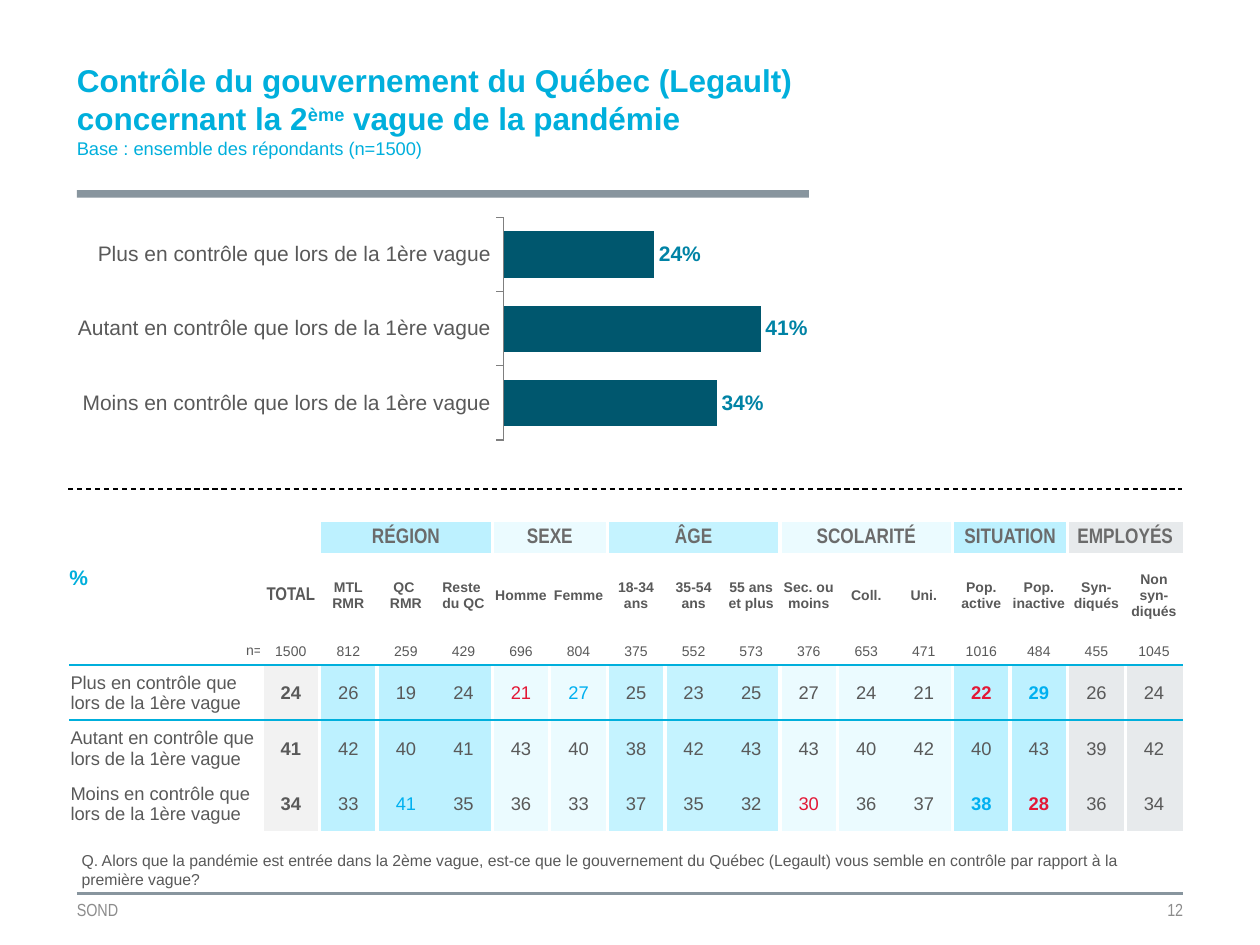
"""Build a survey slide with a bar chart and a demographic breakdown table."""
from lxml.etree import SubElement
from pptx import Presentation
from pptx.chart.data import CategoryChartData
from pptx.dml.color import RGBColor
from pptx.enum.chart import XL_CHART_TYPE, XL_LABEL_POSITION, XL_TICK_LABEL_POSITION, XL_TICK_MARK
from pptx.enum.dml import MSO_LINE
from pptx.enum.shapes import MSO_CONNECTOR, MSO_SHAPE
from pptx.enum.text import MSO_ANCHOR, PP_ALIGN
from pptx.oxml import parse_xml
from pptx.oxml.ns import nsdecls, qn
from pptx.util import Inches, Pt

WHITE = RGBColor(0xFF, 0xFF, 0xFF)
BLACK = RGBColor(0, 0, 0)
CYAN = RGBColor(0x00, 0xAF, 0xDC)
SLATE = RGBColor(0x88, 0x95, 0x9E)
TEXT = RGBColor(0x59, 0x59, 0x59)
HEADING = RGBColor(0x6B, 0x6B, 0x6B)
FOOTER = RGBColor(0x8C, 0x8C, 0x8C)
AXIS = RGBColor(0x7F, 0x7F, 0x7F)
BAR = RGBColor(0x00, 0x57, 0x6E)
LABEL = RGBColor(0x00, 0x83, 0xA5)
LOW = RGBColor(0xE3, 0x18, 0x36)
HIGH = RGBColor(0x00, 0xB0, 0xF0)
TOTAL_FILL = RGBColor(0xF2, 0xF2, 0xF2)
SKY = RGBColor(0xBD, 0xF1, 0xFF)
PALE = RGBColor(0xEB, 0xFB, 0xFF)
AQUA = RGBColor(0xC5, 0xF3, 0xFF)
GREY = RGBColor(0xE7, 0xEA, 0xEC)

NARROW = "Arial Narrow"
NO_STYLE = "{2D5ABB26-0587-4C30-8999-92F81FD0307C}"
ANSWERS = [f"{level} en contrôle que lors de la 1ère vague" for level in ("Plus", "Autant", "Moins")]
SHARES = [0.24, 0.41, 0.34]
GROUPS = [
    ("", 1, TOTAL_FILL), ("RÉGION", 3, SKY), ("SEXE", 2, PALE), ("ÂGE", 3, AQUA),
    ("SCOLARITÉ", 3, PALE), ("SITUATION", 2, SKY), ("EMPLOYÉS", 2, GREY),
]
COLUMNS = [
    "TOTAL", "MTL\vRMR", "QC \vRMR", "Reste \vdu QC", "Homme", "Femme",
    "18-34 ans", "35-54 ans", "55 ans et plus", "Sec. ou moins", "Coll.", "Uni.",
    "Pop. active", "Pop. inactive", "Syn-diqués", "Non syn-diqués",
]
COUNTS = [1500, 812, 259, 429, 696, 804, 375, 552, 573, 376, 653, 471, 1016, 484, 455, 1045]
RESULTS = [
    [24, 26, 19, 24, 21, 27, 25, 23, 25, 27, 24, 21, 22, 29, 26, 24],
    [41, 42, 40, 41, 43, 40, 38, 42, 43, 43, 40, 42, 40, 43, 39, 42],
    [34, 33, 41, 35, 36, 33, 37, 35, 32, 30, 36, 37, 38, 28, 36, 34],
]
MARKS = {
    (0, 4): (LOW, False), (0, 5): (HIGH, False), (0, 12): (LOW, True), (0, 13): (HIGH, True),
    (2, 2): (HIGH, False), (2, 9): (LOW, False), (2, 12): (HIGH, True), (2, 13): (LOW, True),
}
ROW_HEIGHTS = [0.25, 0.66, 0.22, 0.44, 0.44, 0.44]


def style(font, size, color, bold=False, name="Arial"):
    """Set the face, size, colour and weight of a font."""
    font.name, font.size, font.bold = name, Pt(size), bold
    font.color.rgb = color


def add_line(slide, x1, x2, y, color, width, dash=None):
    """Draw a horizontal rule without a shadow."""
    ln = slide.shapes.add_connector(MSO_CONNECTOR.STRAIGHT, Inches(x1), Inches(y), Inches(x2), Inches(y))
    ln.line.color.rgb, ln.line.width = color, Pt(width)
    if dash:
        ln.line.dash_style = dash
    SubElement(ln._element.spPr, qn("a:effectLst"))


def add_text(slide, box, text, size, color, name="Arial", align=PP_ALIGN.LEFT, inset=True):
    """Add a wrapped text box holding one styled paragraph and return its frame."""
    tf = slide.shapes.add_textbox(*map(Inches, box)).text_frame
    tf.word_wrap = True
    if not inset:
        tf.margin_left = tf.margin_right = tf.margin_top = tf.margin_bottom = 0
        tf.vertical_anchor = MSO_ANCHOR.MIDDLE
    p = tf.paragraphs[0]
    p.text, p.alignment = text, align
    style(p.runs[0].font, size, color, name=name)
    return tf


def add_title(slide):
    """Add the title with its superscript and the base line below it."""
    tf = add_text(slide, (0.61, 0.41, 5.81, 1.1),
                  "Contrôle du gouvernement du Québec (Legault) concernant la 2", 18, CYAN, inset=False)
    tf.margin_bottom = Inches(0.17)
    p = tf.paragraphs[0]
    p.runs[0].font.bold = True
    for text in ("ème", " vague de la pandémie"):
        r = p.add_run()
        r.text = text
        style(r.font, 18, CYAN, bold=True)
    p.runs[1].font._element.set("baseline", "30000")
    p.add_line_break()
    r = p.add_run()
    r.text = "Base : ensemble des répondants (n=1500)"
    style(r.font, 10.5, CYAN)


def add_bars(slide):
    """Add the bar chart of the three answers."""
    data = CategoryChartData(number_format="0%")
    data.categories = ANSWERS
    data.add_series("Series 1", SHARES)
    box = map(Inches, (0.43, 1.69, 7.28, 1.84))
    chart = slide.shapes.add_chart(XL_CHART_TYPE.BAR_CLUSTERED, *box, data).chart
    chart.has_legend = chart.has_title = False
    style(chart.font, 10.5, AXIS)
    cat, val = chart.category_axis, chart.value_axis
    cat.reverse_order = True
    cat.major_tick_mark = XL_TICK_MARK.OUTSIDE
    cat.tick_label_position = XL_TICK_LABEL_POSITION.LOW
    cat.format.line.color.rgb = AXIS
    style(cat.tick_labels.font, 12, TEXT)
    val.minimum_scale, val.maximum_scale, val.major_unit = 0, 0.6, 0.2
    val.has_major_gridlines = val.visible = False
    plot = chart.plots[0]
    plot.gap_width, plot.vary_by_categories = 60, False
    fill = plot.series[0].format.fill
    fill.solid()
    fill.fore_color.rgb = BAR
    plot.has_data_labels = True
    labels = plot.data_labels
    labels.show_value, labels.position = True, XL_LABEL_POSITION.OUTSIDE_END
    labels.number_format, labels.number_format_is_linked = "0%", False
    style(labels.font, 12, LABEL, bold=True)
    area = chart._chartSpace.chart.plotArea
    for old in area.findall(qn("c:layout")):
        area.remove(old)
    sizes = "".join(f'<c:{k} val="{v}"/>' for k, v in (("x", 0.49), ("y", 0.02), ("w", 0.41), ("h", 0.96)))
    area.insert(0, parse_xml(
        f'<c:layout {nsdecls("c")}><c:manualLayout><c:layoutTarget val="inner"/>'
        f'<c:xMode val="edge"/><c:yMode val="edge"/>{sizes}</c:manualLayout></c:layout>'))


def set_border(cell, side, color, width):
    """Draw one side of a cell: L, R, T or B, called in that order."""
    cell._tc.get_or_add_tcPr().append(parse_xml(
        f'<a:ln{side} {nsdecls("a")} w="{Pt(width)}"><a:solidFill>'
        f'<a:srgbClr val="{color}"/></a:solidFill></a:ln{side}>'))


def set_cell(cell, text, size, color=TEXT, bold=False, name="Arial", align=PP_ALIGN.CENTER):
    """Write one styled, vertically centred cell."""
    cell.text = str(text)
    cell.vertical_anchor = MSO_ANCHOR.MIDDLE
    cell.margin_left = cell.margin_right = cell.margin_top = Inches(0.01)
    cell.margin_bottom = 0
    p = cell.text_frame.paragraphs[0]
    p.alignment = align
    style(p.font, size, color, bold, name)
    for r in p.runs:
        style(r.font, size, color, bold, name)


def set_side_label(cell, text, size, color, bold, align):
    """Write a label of the first column above the answers."""
    set_cell(cell, text, size, color, bold, align=align)
    cell.margin_left = cell.margin_right = 0
    cell.margin_top = cell.margin_bottom = Inches(0.05)
    cell.text_frame.paragraphs[0].line_spacing = 0.95


def frame_cells(table):
    """Draw the group gaps and the header rule, and fill the groups."""
    groups = [(None, True, True)]
    for _, span, fill in GROUPS:
        groups += [(fill, i == 0, i == span - 1) for i in range(span)]
    for row in range(len(ROW_HEIGHTS)):
        for col, (color, first, last) in enumerate(groups):
            cell = table.cell(row, col)
            sides = [("L", first and col > 0, WHITE, 2.25), ("R", last and col < 16, WHITE, 2.25),
                     ("T", row == 3, CYAN, 1.5), ("B", row == 2, CYAN, 1.5)]
            for side, wanted, line, width in sides:
                if wanted:
                    set_border(cell, side, line, width)
            if color and (row > 2 or (row == 0 and col > 1)):
                cell.fill.solid()
                cell.fill.fore_color.rgb = color
            else:
                cell.fill.background()


def add_breakdown(slide):
    """Add the table of results by demographic group."""
    box = map(Inches, (0.55, 4.14, 8.84, sum(ROW_HEIGHTS)))
    table = slide.shapes.add_table(len(ROW_HEIGHTS), len(COLUMNS) + 1, *box).table
    table.first_row = table.horz_banding = False
    table._tbl.tblPr.find(qn("a:tableStyleId")).text = NO_STYLE
    for i, column in enumerate(table.columns):
        column.width = Inches((8.84 - 1.53) / len(COLUMNS) if i else 1.53)
    for row, height in zip(table.rows, ROW_HEIGHTS):
        row.height = Inches(height)
    frame_cells(table)
    table.cell(0, 0).merge(table.cell(1, 0))
    set_side_label(table.cell(0, 0), "%", 12, CYAN, True, PP_ALIGN.LEFT)
    set_side_label(table.cell(2, 0), "n=", 8, TEXT, False, PP_ALIGN.RIGHT)
    col = 1
    for title, span, _ in GROUPS:
        if span > 1:
            table.cell(0, col).merge(table.cell(0, col + span - 1))
        set_cell(table.cell(0, col), title, 12, HEADING, True, NARROW)
        col += span
    for col, (heading, count) in enumerate(zip(COLUMNS, COUNTS), 1):
        size, name = (10.5, NARROW) if col == 1 else (8, "Arial")
        set_cell(table.cell(1, col), heading, size, bold=True, name=name)
        set_cell(table.cell(2, col), count, 8)
    for i, (answer, values) in enumerate(zip(ANSWERS, RESULTS)):
        set_cell(table.cell(i + 3, 0), answer, 10.5, align=PP_ALIGN.LEFT)
        for j, value in enumerate(values):
            color, bold = MARKS.get((i, j), (TEXT, j == 0))
            set_cell(table.cell(i + 3, j + 1), value, 10.5, color, bold)


def main():
    """Build and save the slide."""
    prs = Presentation()
    prs.slide_width, prs.slide_height = Inches(10), Inches(7.5)
    s = prs.slides.add_slide(prs.slide_layouts[6])
    add_line(s, 0.61, 9.39, 7.09, SLATE, 1.5)
    sp = s.shapes.add_shape(MSO_SHAPE.RECTANGLE, *map(Inches, (0.61, 1.51, 5.81, 0.06)))
    sp.shadow.inherit = False
    sp.fill.solid()
    sp.fill.fore_color.rgb = SLATE
    sp.line.fill.background()
    add_text(s, (0.61, 7.09, 2.8, 0.26), "SOND", 10, FOOTER, NARROW, inset=False)
    add_text(s, (6.55, 7.09, 2.84, 0.26), "12", 10, FOOTER, NARROW, PP_ALIGN.RIGHT, inset=False)
    add_bars(s)
    add_text(s, (0.55, 6.7, 8.87, 0.4),
             "Q. Alors que la pandémie est entrée dans la 2ème vague, est-ce que le gouvernement du Québec "
             "(Legault) vous semble en contrôle par rapport à la première vague?", 9, TEXT)
    add_title(s)
    add_breakdown(s)
    add_line(s, 0.54, 9.38, 3.88, BLACK, 0.75, MSO_LINE.DASH)
    prs.save("out.pptx")


if __name__ == "__main__":
    main()
